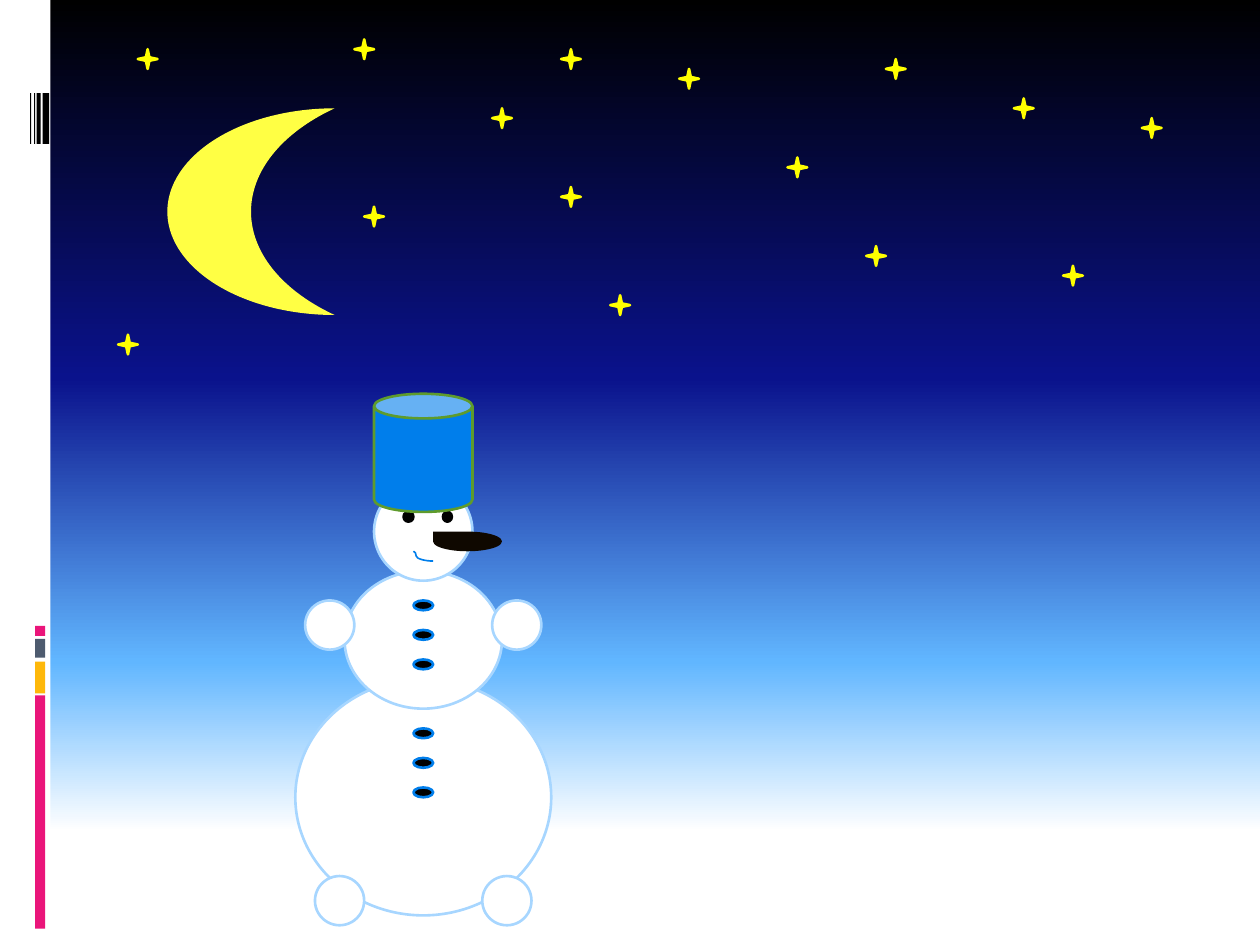
from lxml import etree
from pptx import Presentation
from pptx.dml.color import RGBColor
from pptx.enum.shapes import MSO_CONNECTOR, MSO_SHAPE
from pptx.oxml.ns import qn
from pptx.util import Cm, Pt

RECTANGLE = MSO_SHAPE.RECTANGLE
OVAL = MSO_SHAPE.OVAL
STAR = MSO_SHAPE.STAR_4_POINT
MOON = MSO_SHAPE.MOON
TEARDROP = MSO_SHAPE.TEAR
CAN = MSO_SHAPE.CAN
CURVE = MSO_CONNECTOR.CURVE

SLIDE_WIDTH, SLIDE_HEIGHT = 25.4, 19.05
CELL = SLIDE_WIDTH / 128  # the drawing sits on a grid of 128 by 96 cells

BLACK, WHITE, YELLOW, BLUE = "000000", "FFFFFF", "FFFF00", "007EEB"
MOONLIGHT, NOSE, SNOW_EDGE, GREEN = "FFFF44", "0F0800", "A7D6FF", "5E9B2C"
PINK, AMBER, SLATE = "EA157A", "FEB80A", "4E5B6F"

SKY_STOPS = [(0, BLACK), (40, "0A128C"), (70, "61B6FF"), (88, WHITE), (100, WHITE)]
STARS = [(50, 11), (69, 7), (57, 19), (90, 6), (14, 5), (12, 34), (88, 25), (37, 21),
         (36, 4), (116, 12), (80, 16), (108, 27), (62, 30), (57, 5), (103, 10)]


def rgb(value):
    return RGBColor.from_string(value)


def add_figure(slide, kind, box, fill, line=None):
    """Add a preset shape; box is left, top, width, height in cm."""
    figure = slide.shapes.add_shape(kind, *[Cm(length) for length in box])
    figure.shadow.inherit = False
    figure.fill.solid()
    figure.fill.fore_color.rgb = rgb(fill)
    if line:
        figure.line.color.rgb = rgb(line)
        figure.line.width = Pt(1.5)
    else:
        figure.line.fill.background()
    return figure


def on_grid(origin, left, top, width, height):
    """Turn cells counted from origin into a box in cm."""
    return (origin[0] + left * CELL, origin[1] + top * CELL, width * CELL, height * CELL)


def paint_sky(slide):
    sky = slide.background.fill
    sky.gradient()
    sky.gradient_angle = 270
    stops = slide.element.find(".//" + qn("a:gsLst"))
    for default_stop in list(stops):
        stops.remove(default_stop)
    for percent, colour in SKY_STOPS:
        stop = etree.SubElement(stops, qn("a:gs"), pos=str(percent * 1000))
        etree.SubElement(stop, qn("a:srgbClr"), val=colour)


def add_sidebar(slide, left, top, width, height):
    add_figure(slide, RECTANGLE, (left, top, width, height), WHITE)
    for bar_left, bar_width in [(0.86, 0.13), (0.74, 0.08), (0.69, 0.02), (0.61, 0.02)]:
        add_figure(slide, RECTANGLE, (left + bar_left, top + 1.88, bar_width, 1.02), BLACK)
    for band_top, band_height, colour in [(14.02, 4.7, PINK), (13.34, 0.64, AMBER),
                                          (12.88, 0.38, SLATE), (12.62, 0.2, PINK)]:
        add_figure(slide, RECTANGLE, (left + 0.71, top + band_top, 0.2, band_height), colour)


def add_night_lights(slide, left, top):
    origin = (left, top)
    add_figure(slide, MOON, on_grid(origin, 17, 11, 17, 21), MOONLIGHT)
    for column, row in STARS:
        add_figure(slide, STAR, on_grid(origin, column, row, 2, 2), YELLOW, YELLOW)


def add_mouth(slide, left, top, width, height):
    mouth = slide.shapes.add_connector(CURVE, Cm(left), Cm(top),
                                       Cm(left + width), Cm(top + height))
    mouth.line.color.rgb = rgb(BLUE)
    mouth.line.width = Pt(0.94)
    properties = mouth.element.spPr
    etree.SubElement(properties, qn("a:effectLst"))
    adjustments = properties.find(".//" + qn("a:avLst"))
    etree.SubElement(adjustments, qn("a:gd"), name="adj1", fmla="val 14400")


def add_snowman(slide, left, top):
    origin = (left, top)
    snowballs = [(0, 29, 26, 24), (5, 18, 16, 14), (8, 9, 10, 10),  # body, chest, head
                 (20, 21, 5, 5), (1, 21, 5, 5),  # hands
                 (19, 49, 5, 5), (2, 49, 5, 5)]  # feet
    for cells in snowballs:
        add_figure(slide, OVAL, on_grid(origin, *cells), WHITE, SNOW_EDGE)

    nose = add_figure(slide, TEARDROP, on_grid(origin, 14, 14, 7, 2), NOSE)
    nose.element.spPr.find(qn("a:xfrm")).set("flipH", "1")
    for eye_left, eye_width in [(11, 1), (15, 0.9)]:
        add_figure(slide, OVAL, on_grid(origin, eye_left, 12, eye_width, 1), BLACK, BLACK)
    add_mouth(slide, *on_grid(origin, 12, 16, 2, 1))
    add_figure(slide, CAN, on_grid(origin, 8, 0, 10, 12), BLUE, GREEN)

    for first_row in (21, 34):
        for step in range(3):
            add_figure(slide, OVAL, on_grid(origin, 12, first_row + 3 * step, 2, 1), BLACK, BLUE)


def main():
    presentation = Presentation()
    presentation.slide_width = Cm(SLIDE_WIDTH)
    presentation.slide_height = Cm(SLIDE_HEIGHT)
    slide = presentation.slides.add_slide(presentation.slide_layouts[6])
    paint_sky(slide)
    add_sidebar(slide, 0, 0, 1.02, SLIDE_HEIGHT)
    add_night_lights(slide, 0, 0)
    add_snowman(slide, 30 * CELL, 40 * CELL)
    presentation.save("out.pptx")


if __name__ == "__main__":
    main()
